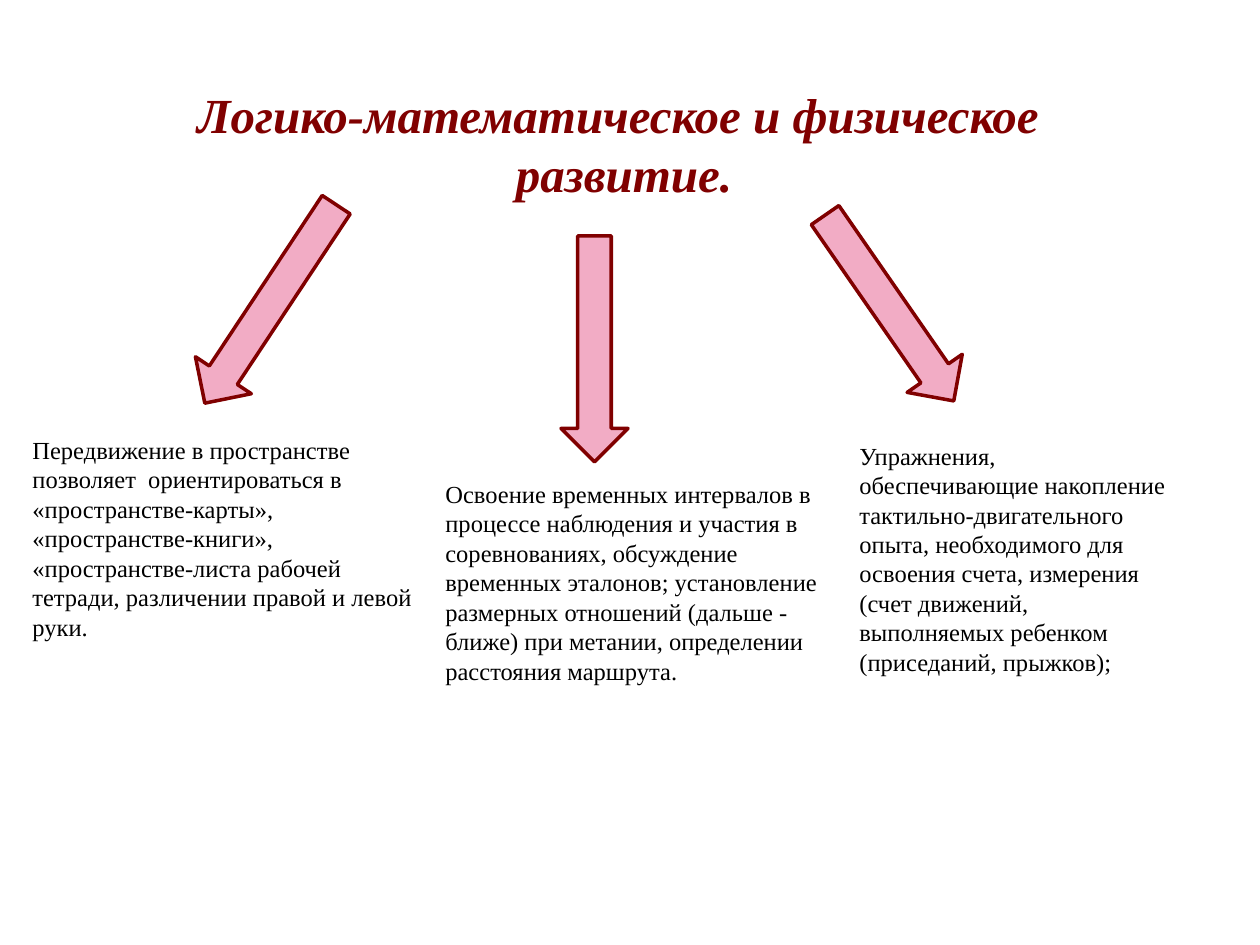
from pptx import Presentation
from pptx.dml.color import RGBColor
from pptx.enum.shapes import MSO_SHAPE as Shape
from pptx.enum.text import MSO_ANCHOR as Anchor, MSO_AUTO_SIZE as AutoSize, PP_ALIGN as Align
from pptx.util import Emu, Pt

EMU_PER_PX = 914400 / 126
FONT = "Times New Roman"
MAROON = RGBColor(0x80, 0x00, 0x00)
PINK = RGBColor(0xF2, 0xAC, 0xC5)
BLACK = RGBColor(0x00, 0x00, 0x00)

TITLE = "Логико-математическое и физическое  развитие."
ARROW_WIDTH = 67

# Each arrow: left, top, height, rotation
ARROWS = [
    (237, 185, 238, 33.5),
    (561, 236, 226, 0),
    (856, 195, 226, 325.3),
]

# Each description: left, top, width, height, text
DESCRIPTIONS = [
    (20, 428, 423, 220,
     "Передвижение в пространстве позволяет  ориентироваться в "
     "«пространстве-карты», «пространстве-книги», «пространстве-листа рабочей "
     "тетради, различении правой и левой руки."),
    (433, 472, 403, 220,
     "Освоение временных интервалов в процессе наблюдения и участия в "
     "соревнованиях, обсуждение временных эталонов; установление размерных "
     "отношений (дальше - ближе) при метании, определении расстояния маршрута."),
    (847, 433, 344, 251,
     "Упражнения, обеспечивающие накопление тактильно-двигательного опыта, "
     "необходимого для освоения счета, измерения (счет движений, выполняемых "
     "ребенком (приседаний, прыжков);"),
]


def px(*lengths):
    return [Emu(round(length * EMU_PER_PX)) for length in lengths]


def write_text(shape, text, size, color, anchor, align, emphasis=False):
    """Put one formatted run into the shape's first paragraph."""
    frame = shape.text_frame
    frame.word_wrap = True
    frame.auto_size = AutoSize.SHAPE_TO_FIT_TEXT
    frame.vertical_anchor = anchor
    paragraph = frame.paragraphs[0]
    paragraph.alignment = align
    run = paragraph.add_run()
    run.text = text
    font = run.font
    font.name = FONT
    font.size = Pt(size)
    font.bold = font.italic = emphasis
    font.color.rgb = color


def set_title(slide):
    title = slide.shapes.title
    title.left, title.top, title.width, title.height = px(78, 78, 1092, 131)
    write_text(title, TITLE, 28, MAROON, Anchor.TOP, Align.CENTER, emphasis=True)


def add_arrow(slide, left, top, height, rotation):
    arrow = slide.shapes.add_shape(Shape.DOWN_ARROW, *px(left, top, ARROW_WIDTH, height))
    arrow.rotation = rotation
    arrow.shadow.inherit = False
    arrow.fill.solid()
    arrow.fill.fore_color.rgb = PINK
    arrow.line.color.rgb = MAROON
    arrow.line.width = Pt(2)


def add_description(slide, left, top, width, height, text):
    box = slide.shapes.add_textbox(*px(left, top, width, height))
    write_text(box, text, 14, BLACK, Anchor.MIDDLE, Align.LEFT)


def main():
    presentation = Presentation()
    presentation.slide_width, presentation.slide_height = px(1260, 945)
    slide = presentation.slides.add_slide(presentation.slide_layouts[5])
    set_title(slide)
    for arrow in ARROWS:
        add_arrow(slide, *arrow)
    for description in DESCRIPTIONS:
        add_description(slide, *description)
    presentation.save("out.pptx")


if __name__ == "__main__":
    main()
